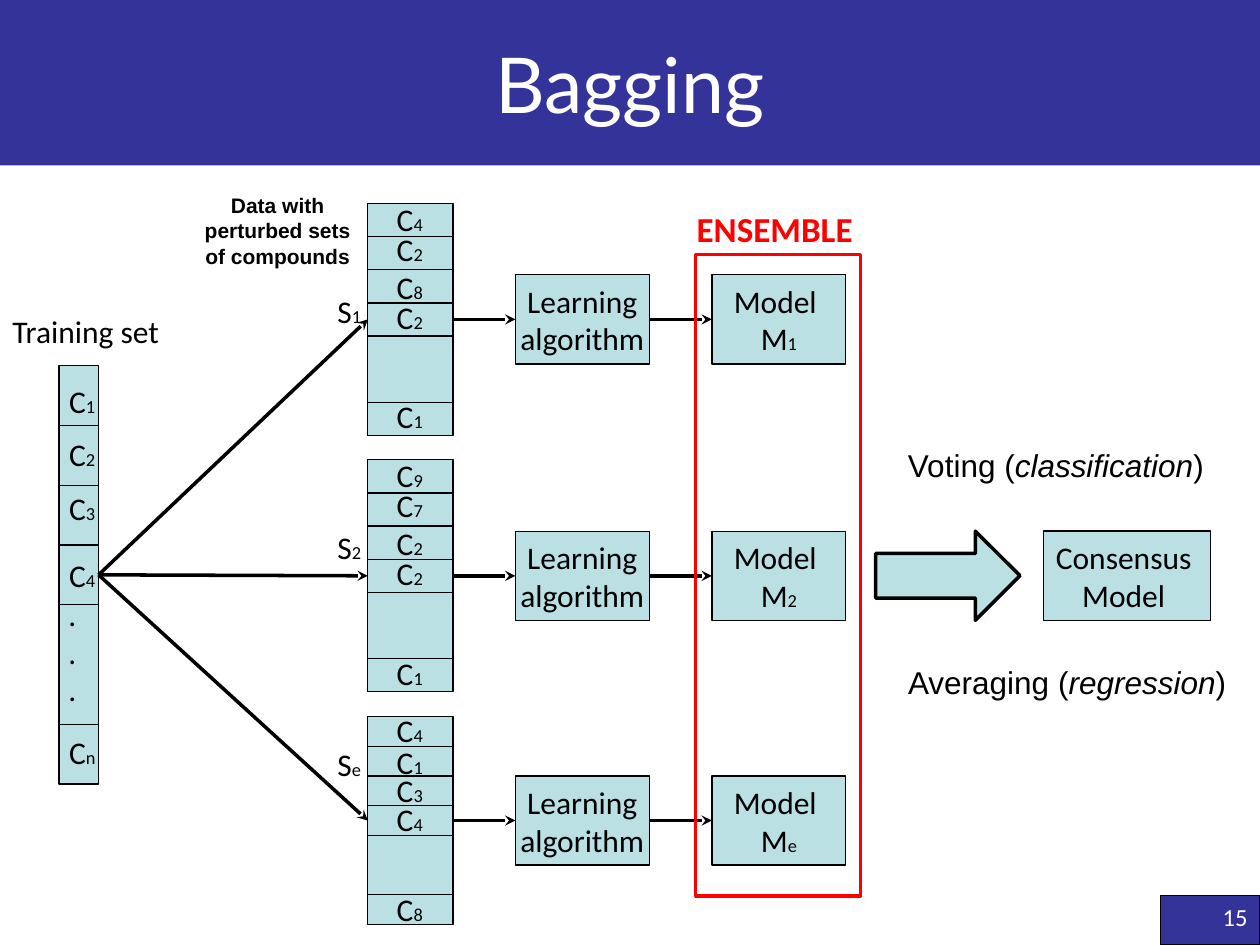
from lxml.etree import SubElement
from pptx import Presentation
from pptx.dml.color import RGBColor
from pptx.enum.shapes import MSO_CONNECTOR, MSO_SHAPE
from pptx.enum.text import MSO_ANCHOR, MSO_AUTO_SIZE, PP_ALIGN
from pptx.oxml.ns import qn
from pptx.util import Pt

BLACK, WHITE, RED = "000000", "FFFFFF", "FF0000"
NAVY, AQUA = "333399", "BBE0E3"
BODY = {"name": "Calibri", "size": Pt(18)}
ARIAL = {"name": "Arial", "size": Pt(18)}
SMALL = {"size": Pt(10.5)}
ITALIC = {"italic": True}
DIVIDERS = (1, 2, 3, 4, 6)
ROW_UNITS = 7
LABEL_HEIGHT = 29


def rgb(value):
    return RGBColor.from_string(value)


def indexed(letter, index):
    return [(letter, {}), (index, SMALL)]


def plain(*lines):
    return [[(line, {})] for line in lines]


def write(holder, paragraphs, font=BODY, color=BLACK, align=PP_ALIGN.LEFT, **frame_format):
    frame = holder.text_frame
    for key, value in frame_format.items():
        setattr(frame, key, value)
    for number, runs in enumerate(paragraphs):
        paragraph = frame.paragraphs[0] if number == 0 else frame.add_paragraph()
        paragraph.alignment = align
        for text, changes in runs:
            run = paragraph.add_run()
            run.text = text
            run.font.color.rgb = rgb(color)
            for key, value in {**font, **changes}.items():
                setattr(run.font, key, value)


def label(slide, box, paragraphs, wrap=False, **style):
    holder = slide.shapes.add_textbox(*map(Pt, box))
    write(holder, paragraphs, word_wrap=wrap, auto_size=MSO_AUTO_SIZE.SHAPE_TO_FIT_TEXT, **style)


def block(slide, box, fill=AQUA, line=BLACK, weight=0.75, preset=MSO_SHAPE.RECTANGLE):
    part = slide.shapes.add_shape(preset, *map(Pt, box))
    part.shadow.inherit = False
    if fill:
        part.fill.solid()
        part.fill.fore_color.rgb = rgb(fill)
    else:
        part.fill.background()
    if line:
        part.line.color.rgb = rgb(line)
        part.line.width = Pt(weight)
    else:
        part.line.fill.background()
    return part


def stroke(slide, start, end, weight):
    link = slide.shapes.add_connector(MSO_CONNECTOR.STRAIGHT, *map(Pt, (*start, *end)))
    link.line.color.rgb = rgb(BLACK)
    link.line.width = Pt(weight)
    SubElement(link._element.spPr, qn("a:effectLst"))
    return link


def arrow(slide, source, target):
    link = stroke(slide, (0, 0), (0, 0), 2)
    link.begin_connect(source, 3)
    link.end_connect(target, 1)
    SubElement(link.line._get_or_add_ln(), qn("a:tailEnd"), type="stealth")


def compound_column(slide, box, indices, offsets, inset):
    left, top, width, height = box
    column = block(slide, box)
    for row in DIVIDERS:
        y = top + height * row / ROW_UNITS
        stroke(slide, (left, y), (left + width, y), 0.75)
    for index, offset in zip(indices, offsets):
        label(slide, (left + inset, top + offset, 29.5, LABEL_HEIGHT), [indexed("C", index)])
    return column


def training_set(slide, box):
    left, top, width, height = box
    label(slide, (0, top - 34.5, 99.5, LABEL_HEIGHT), plain("Training set"))
    column = compound_column(slide, box, "1234n", (5.8, 36, 67, 105, 206.6), -1.4)
    label(slide, (left + 1.4, top + 127.4, 11, 72.7), plain(".", ".", "."))
    return column


def process_box(slide, box, paragraphs):
    part = block(slide, box)
    write(part, paragraphs, align=PP_ALIGN.CENTER, vertical_anchor=MSO_ANCHOR.MIDDLE, word_wrap=False)
    return part


def sample_row(slide, box, training, name, name_top, indices, offsets):
    left, top, width, height = box
    sample = compound_column(slide, box, indices, offsets, 9.4)
    step_top = top + height / 2 - 25.5
    learner = process_box(slide, (left + 84.3, step_top, 76.5, 51), plain("Learning", "algorithm"))
    model = process_box(slide, (left + 196.6, step_top, 76.5, 51), [*plain("Model "), indexed("M", name)])
    for source, target in ((training, sample), (sample, learner), (learner, model)):
        arrow(slide, source, target)
    label(slide, (left - 24.5, name_top, 28, LABEL_HEIGHT), [indexed("S", name)])


def ensemble_frame(slide, box):
    left, top, width, height = box
    block(slide, box, fill=None, line=RED, weight=2)
    label(slide, (left - 6.5, top - 30.2, 107.3, 31.7), plain("ENSEMBLE"), wrap=True, color=RED,
          font={"name": "Calibri", "size": Pt(20), "bold": True})


def consensus(slide, box):
    left, top, width, height = box
    block(slide, (left, top, 82.5, height), weight=2, preset=MSO_SHAPE.RIGHT_ARROW)
    process_box(slide, (left + width - 95.5, top, 95.5, height), plain("Consensus ", "Model "))
    methods = (("Voting", "classification", -52.4, 185), ("Averaging", "regression", 71.7, 203))
    for method, task, offset, span in methods:
        label(slide, (left + 11.4, top + offset, span, LABEL_HEIGHT),
              [[(f"{method} (", {}), (task, ITALIC), (")", {})]], font=ARIAL)


def header(slide, box):
    title = block(slide, box, fill=NAVY, line=None)
    write(title, plain("Bagging"), font={"name": "Lato", "size": Pt(44)}, color=WHITE,
          align=PP_ALIGN.CENTER, vertical_anchor=MSO_ANCHOR.MIDDLE)


def page_number(slide, box):
    corner = block(slide, box, fill=NAVY)
    write(corner, plain("15"), font={"name": "Calibri", "size": Pt(14)}, color=WHITE,
          align=PP_ALIGN.RIGHT, vertical_anchor=MSO_ANCHOR.TOP)


def bagging_slide(slide, box):
    left, top, width, height = box
    header(slide, (left, top, width, 94.5))
    page_number(slide, (left + width - 57, top + height - 28.3, 57, 28.3))
    training = training_set(slide, (33.8, 209, 22.5, 239))
    tall = (-5.8, 11.5, 33.1, 50.4, 107.3)
    short = (-6.5, 11.5, 27.4, 43.9, 95.8)
    rows = (
        ("1", 116.3, 132.5, 163.4, "42821", tall),
        ("2", 262.8, 132.5, 298, "97221", tall),
        ("e", 409.5, 118.8, 422, "41348", short),
    )
    for name, row_top, row_height, name_top, indices, offsets in rows:
        sample_row(slide, (210.2, row_top, 48.6, row_height), training, name, name_top, indices, offsets)
    ensemble_frame(slide, (397.5, 145.4, 94.3, 366.5))
    consensus(slide, (500.4, 303.5, 191.5, 51))
    label(slide, (109.4, 106.6, 98.6, 51), plain("Data with", "perturbed sets", "of compounds"),
          font={"name": "Arial", "size": Pt(12), "bold": True}, align=PP_ALIGN.CENTER)


def main():
    deck = Presentation()
    deck.slide_width, deck.slide_height = Pt(720), Pt(540)
    bagging_slide(deck.slides.add_slide(deck.slide_layouts[6]), (0, 0, 720, 540))
    deck.save("out.pptx")


if __name__ == "__main__":
    main()
